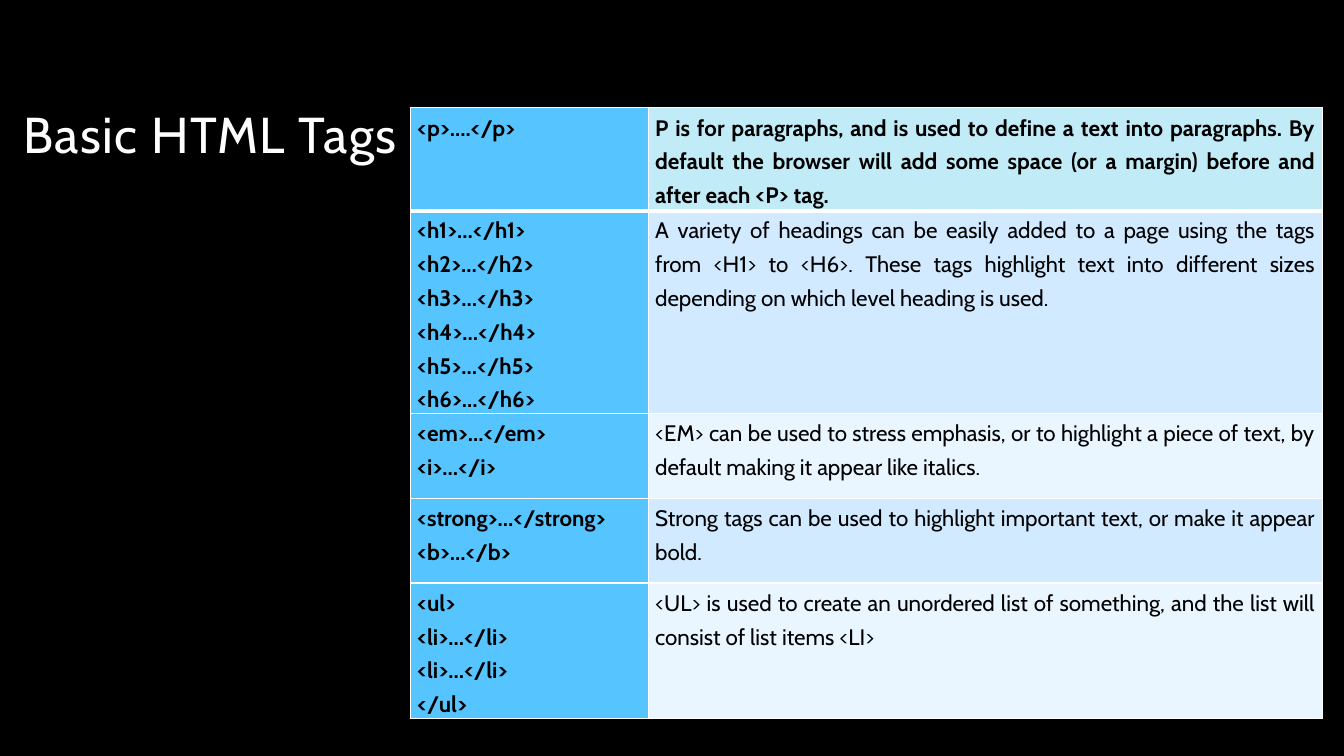
import dataclasses

import lxml.etree
import pptx
import pptx.dml.color
import pptx.enum.text
import pptx.oxml.ns
import pptx.util

Pt = pptx.util.Pt


@dataclasses.dataclass(frozen=True)
class Theme:
    font: str = "Cabin"
    title_size: int = 36
    body_size: int = 16
    background: str = "000000"
    title: str = "FFFFFF"
    text: str = "000000"
    border: str = "FFFFFF"
    tag_fill: str = "56C5FF"
    first_fill: str = "C1EBF7"
    band_fills: tuple = ("D1EAFF", "E9F5FF")


class SlideBuilder:
    def __init__(self, presentation, theme):
        self.theme = theme
        self.slide = presentation.slides.add_slide(presentation.slide_layouts[6])
        self.paint(self.slide.background.fill, theme.background)

    def paint(self, fill, color):
        fill.solid()
        fill.fore_color.rgb = pptx.dml.color.RGBColor.from_string(color)

    def style_font(self, paragraph, size, color, bold=False):
        font = paragraph.font
        font.name = self.theme.font
        font.size = Pt(size)
        font.bold = bold
        self.paint(font.fill, color)

    def add_title(self, text, left, top, width, height):
        frame = self.slide.shapes.add_textbox(
            Pt(left), Pt(top), Pt(width), Pt(height)
        ).text_frame
        frame.word_wrap = True
        frame.vertical_anchor = pptx.enum.text.MSO_ANCHOR.BOTTOM
        paragraph = frame.paragraphs[0]
        paragraph.text = text
        paragraph.line_spacing = 0.9
        self.style_font(paragraph, self.theme.title_size, self.theme.title)
        paragraph.runs[0].font._element.set("spc", "100")

    def add_border(self, cell, side, width):
        qn = pptx.oxml.ns.qn
        properties = cell._tc.get_or_add_tcPr()
        line = lxml.etree.SubElement(properties, qn(f"a:ln{side}"), w=str(Pt(width)))
        fill = lxml.etree.SubElement(line, qn("a:solidFill"))
        lxml.etree.SubElement(fill, qn("a:srgbClr"), val=self.theme.border)

    def fill_cell(self, cell, paragraphs, color, bold, top_border, bottom_border):
        cell.margin_left = cell.margin_right = Pt(5)
        cell.margin_top = cell.margin_bottom = Pt(0)
        borders = {"L": 1, "R": 1, "T": top_border, "B": bottom_border}
        for side, width in borders.items():
            self.add_border(cell, side, width)
        self.paint(cell.fill, color)
        frame = cell.text_frame
        for index, text in enumerate(paragraphs):
            paragraph = frame.add_paragraph() if index else frame.paragraphs[0]
            paragraph.text = text
            alignment = pptx.enum.text.PP_ALIGN
            paragraph.alignment = alignment.LEFT if "\n" in text else alignment.JUSTIFY
            paragraph.line_spacing = 1.25
            self.style_font(paragraph, self.theme.body_size, self.theme.text, bold)

    def add_tag_table(self, rows, left, top, column_widths, row_heights):
        table = self.slide.shapes.add_table(
            len(rows), len(column_widths), Pt(left), Pt(top),
            Pt(sum(column_widths)), Pt(sum(row_heights)),
        ).table
        table.first_row = table.horz_banding = False
        for column, width in zip(table.columns, column_widths):
            column.width = Pt(width)
        for index, (tags, description) in enumerate(rows):
            table.rows[index].height = Pt(row_heights[index])
            first = index == 0
            band = self.theme.band_fills[(index - 1) % 2]
            description_fill = self.theme.first_fill if first else band
            top_border = 3 if index == 1 else 1
            bottom_border = 3 if first else 1
            self.fill_cell(table.cell(index, 0), tags, self.theme.tag_fill,
                           True, top_border, bottom_border)
            self.fill_cell(table.cell(index, 1), [description], description_fill,
                           first, top_border, bottom_border)


TAG_ROWS = [
    (["<p>….</p>"],
     "P is for paragraphs, and is used to define a text into paragraphs. "
     "By default the browser will add some space (or a margin) before and "
     "after each <P> tag."),
    ([f"<h{level}>…</h{level}>" for level in range(1, 7)],
     "A variety of headings can be easily added to a page using the tags "
     "from <H1> to <H6>. These tags highlight text into different sizes "
     "depending on which level heading is used."),
    (["<em>…</em>", "<i>…</i>"],
     "<EM> can be used to stress emphasis, or to highlight a piece of text, "
     "by default making it appear like italics."),
    (["<strong>…</strong>", "<b>…</b>"],
     "Strong tags can be used to highlight important text, or make it appear bold."),
    (["<ul>\n<li>…</li>\n<li>…</li>", "</ul>"],
     "<UL> is used to create an unordered list of something, and the list "
     "will consist of list items <LI>"),
]


def main():
    presentation = pptx.Presentation()
    presentation.slide_width = Pt(960)
    presentation.slide_height = Pt(540)
    builder = SlideBuilder(presentation, Theme())
    builder.add_title("Basic HTML Tags", 9.5, 13, 292, 108)
    builder.add_tag_table(TAG_ROWS, 293, 77, [170, 481.5], [73.5, 145, 60.5, 60.5, 96.5])
    presentation.save("out.pptx")


if __name__ == "__main__":
    main()
